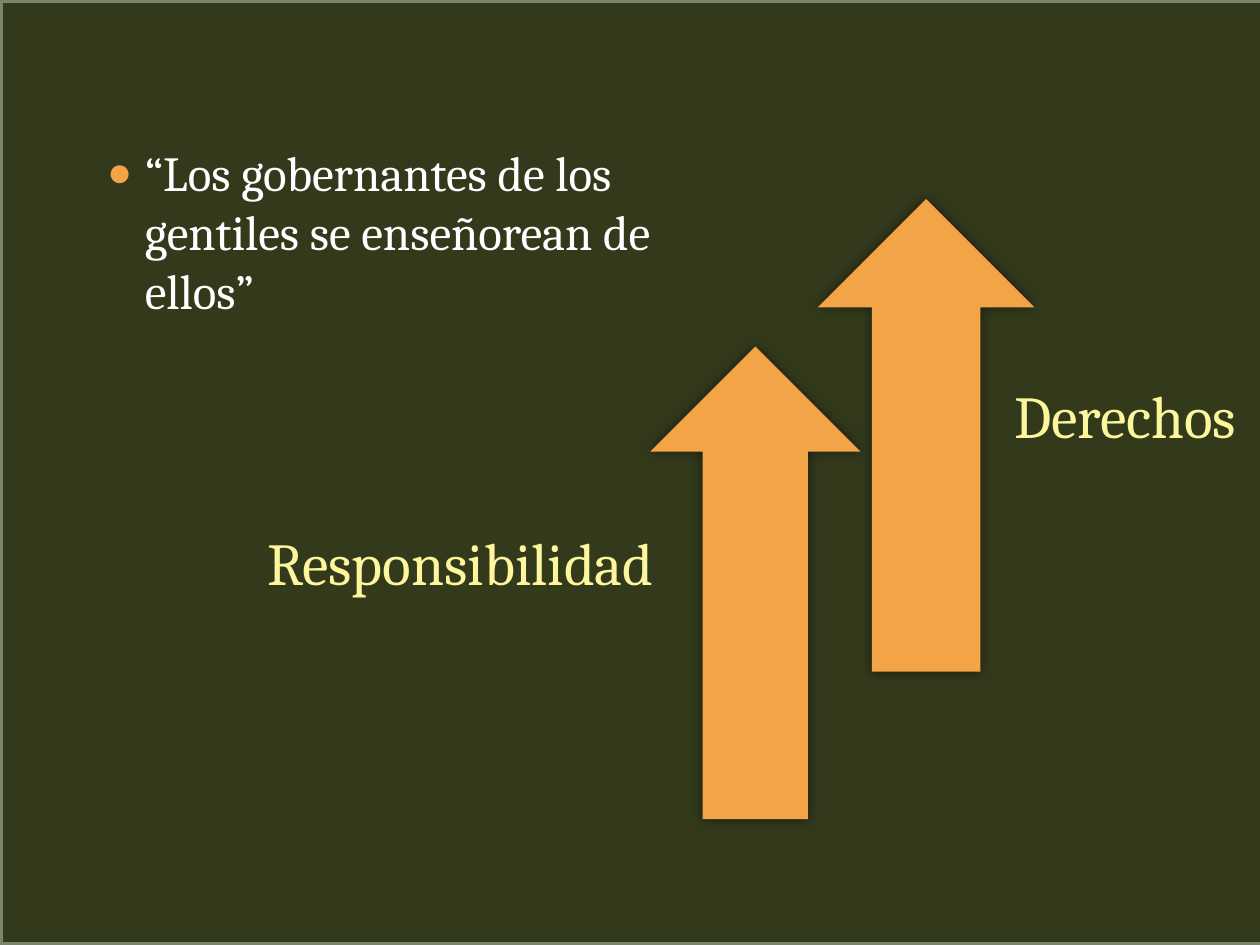
from pptx import Presentation
from pptx.dml.color import RGBColor as RGB
from pptx.enum.shapes import MSO_SHAPE as Shape
from pptx.enum.text import MSO_ANCHOR as Anchor, MSO_AUTO_SIZE as Fit, PP_ALIGN as Align
from pptx.oxml import parse_xml
from pptx.oxml.ns import nsdecls
from pptx.util import Inches, Pt

COLORS = {
    "black": "000000",
    "olive": "333A1C",
    "edge": "7A866C",
    "orange": "F3A447",
    "white": "FFFFFF",
    "yellow": "FDF69C",
}


def rgb(name):
    return RGB.from_string(COLORS[name])


def node(tag, inner="", **attrs):
    """Make a DrawingML element from its tag, inner XML and attributes."""
    pairs = " ".join(f'{key}="{val}"' for key, val in attrs.items())
    return parse_xml(f'<a:{tag} {nsdecls("a")} {pairs}>{inner}</a:{tag}>')


def write(frame, text, size, color, font="Cambria", align=Align.LEFT,
          anchor=Anchor.TOP, inset=(0.1, 0.05, 0.1, 0.05), line=1.0, before=0):
    """Fill a text frame with one formatted paragraph and return it."""
    frame.word_wrap = True
    frame.auto_size = Fit.NONE
    frame.vertical_anchor = anchor
    (frame.margin_left, frame.margin_top,
     frame.margin_right, frame.margin_bottom) = map(Inches, inset)
    para = frame.paragraphs[0]
    para.alignment = align
    para.line_spacing = line
    para.space_before = Pt(before)
    run = para.add_run()
    run.text = text
    run.font.name = font
    run.font.size = Pt(size)
    run.font.color.rgb = rgb(color)
    return para


class Deck:
    def __init__(self):
        self.show = Presentation()
        self.show.slide_width = Inches(10)
        self.show.slide_height = Inches(7.5)
        self.slide = self.show.slides.add_slide(self.show.slide_layouts[1])
        title = self.slide.shapes.title.element
        title.getparent().remove(title)

    def panel(self, box):
        """Lay the olive panel over a black background."""
        back = self.slide.background.fill
        back.solid()
        back.fore_color.rgb = rgb("black")
        rect = self.slide.shapes.add_shape(Shape.RECTANGLE, *map(Inches, box))
        rect.shadow.inherit = False
        rect.fill.solid()
        rect.fill.fore_color.rgb = rgb("olive")
        rect.line.color.rgb = rgb("edge")
        rect.line.width = Pt(3)
        tree = self.slide.shapes._spTree
        tree.remove(rect.element)
        tree.insert(2, rect.element)

    def quote(self, text, box):
        body = self.slide.placeholders[1]
        body.left, body.top, body.width, body.height = map(Inches, box)
        para = write(body.text_frame, text, 28, "white", before=6)
        props = para._p.get_or_add_pPr()
        props.set("marL", str(Inches(0.3)))
        props.set("indent", str(-Inches(0.3)))
        props.append(node("buClr", f'<a:srgbClr val="{COLORS["orange"]}"/>'))
        props.append(node("buSzPct", val=85000))
        props.append(node("buFont", typeface="Arial"))
        props.append(node("buChar", char="●"))

    def arrow(self, text, box, left, width, align):
        """Group an up arrow with a label of the same top and height."""
        group = self.slide.shapes.add_group_shape()
        mark = group.shapes.add_shape(Shape.UP_ARROW, *map(Inches, box))
        mark.shadow.inherit = False
        mark.fill.solid()
        mark.fill.fore_color.rgb = rgb("orange")
        mark.line.fill.background()
        glow = mark.element.spPr.find(node("effectLst").tag)
        glow.append(node(
            "outerShdw",
            f'<a:srgbClr val="{COLORS["black"]}"><a:alpha val="50000"/></a:srgbClr>',
            blurRad=Pt(7.5), dist=0, dir=0, rotWithShape=0))
        label = group.shapes.add_textbox(
            *map(Inches, (left, box[1], width, box[3])))
        write(label.text_frame, text, 34, "yellow", align=align, line=0.9,
              anchor=Anchor.MIDDLE, inset=(0.26, 0, 0.26, 0.26))


def main():
    deck = Deck()
    deck.panel((0, 0, 10.08, 7.5))
    deck.quote("“Los gobernantes de los gentiles se enseñorean de ellos”",
               (0.75, 1.08, 4.83, 1.42))
    deck.arrow("Responsibilidad", (5.16, 2.75, 1.67, 3.75),
               1.75, 3.81, Align.CENTER)
    deck.arrow("Derechos", (6.49, 1.58, 1.72, 3.75),
               7.79, 3.27, Align.LEFT)
    deck.show.save("out.pptx")


if __name__ == "__main__":
    main()
